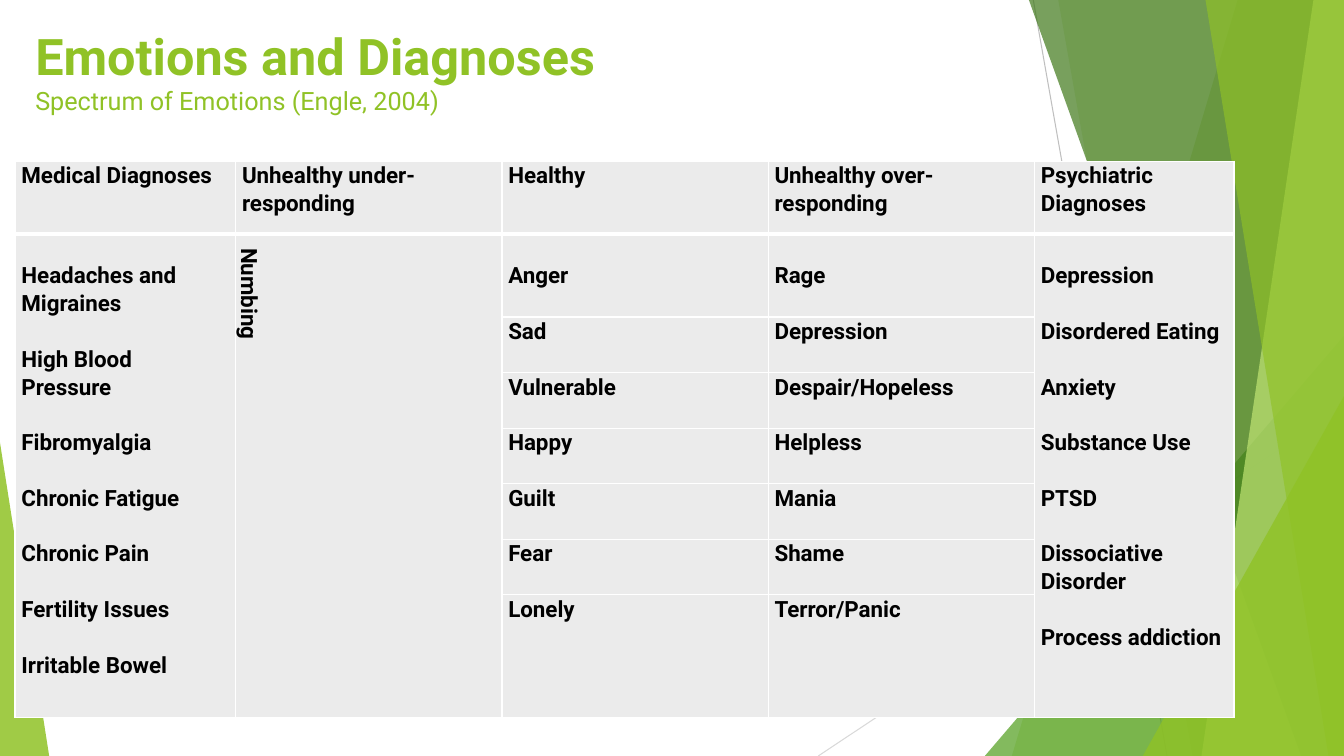
from dataclasses import dataclass

from lxml.etree import SubElement
from pptx import Presentation
from pptx.dml.color import RGBColor
from pptx.enum.shapes import MSO_CONNECTOR, MSO_SHAPE
from pptx.oxml.ns import qn
from pptx.util import Cm, Pt

PAGE_WIDTH, PAGE_HEIGHT = 33.87, 19.05
FONT = "Roboto"
GREEN, CELL_FILL, BLACK, WHITE = "90C226", "EBEBEB", "000000", "FFFFFF"


@dataclass
class Ray:
    start: tuple
    end: tuple
    color: str


@dataclass
class Band:
    top_left: float
    bottom_left: float
    color: str
    opacity: int


@dataclass
class Wedge:
    left: float
    top: float
    width: float
    height: float
    apex: float
    color: str
    opacity: int


RAYS = [
    Ray((26.04, 0), (29.41, PAGE_HEIGHT), "BFBFBF"),
    Ray((PAGE_WIDTH, 10.24), (20.62, PAGE_HEIGHT), "D9D9D9"),
]
FACETS = [
    Band(31.19, 25.5, GREEN, 30),
    Band(26.67, 30.05, GREEN, 20),
    Wedge(24.82, 8.46, 9.05, 10.59, 1, "54A021", 72),
    Band(25.93, 32.79, "3F7819", 70),
    Band(33.1, 30.28, "C0E474", 70),
    Band(30.38, 33.48, GREEN, 65),
    Wedge(28.8, 9.98, 5.07, 9.07, 1, GREEN, 80),
    Wedge(0, 11.15, 1.24, 7.9, 0, GREEN, 85),
]

COLUMN_WIDTHS = [5.56, 6.71, 6.71, 6.71, 5.03]
ROW_HEIGHTS = [1.83, 2.1] + [1.4] * 5 + [3.1]
HEADINGS = ["Medical Diagnoses", "Unhealthy under-responding", "Healthy",
            "Unhealthy over-responding", "Psychiatric Diagnoses"]
MEDICAL = ["Headaches and Migraines", "High Blood\nPressure", "Fibromyalgia",
           "Chronic Fatigue", "Chronic Pain", "Fertility Issues", "Irritable Bowel"]
EMOTIONS = [("Anger", "Rage"), ("Sad", "Depression"), ("Vulnerable", "Despair/Hopeless"),
            ("Happy", "Helpless"), ("Guilt", "Mania"), ("Fear", "Shame"),
            ("Lonely", "Terror/Panic")]
PSYCHIATRIC = ["Depression", "Disordered Eating", "Anxiety", "Substance Use", "PTSD",
               "Dissociative Disorder", "Process addiction"]
BLANK_LINE = 0.7


def rgb(color: str) -> RGBColor:
    return RGBColor.from_string(color)


def write(para, text: str, size: float = 16, color: str = BLACK, bold: bool = True) -> None:
    for index, line in enumerate(text.split("\n")):
        if index:
            para.add_line_break()
        if line:
            span = para.add_run()
            span.text = line
            span.font.name = FONT
            span.font.size = Pt(size)
            span.font.bold = bold
            span.font.color.rgb = rgb(color)


def draw_ray(page, ray: Ray) -> None:
    line = page.shapes.add_connector(
        MSO_CONNECTOR.STRAIGHT, *(Cm(value) for value in ray.start + ray.end))
    line.line.color.rgb = rgb(ray.color)
    line.line.width = Pt(0.75)
    SubElement(line._element.spPr, qn("a:effectLst"))


def draw_facet(page, facet: Band | Wedge) -> None:
    if isinstance(facet, Band):
        builder = page.shapes.build_freeform(Cm(facet.top_left), 0)
        builder.add_line_segments([
            (Cm(PAGE_WIDTH), 0),
            (Cm(PAGE_WIDTH), Cm(PAGE_HEIGHT)),
            (Cm(facet.bottom_left), Cm(PAGE_HEIGHT)),
        ])
        shape = builder.convert_to_shape()
    else:
        shape = page.shapes.add_shape(
            MSO_SHAPE.ISOSCELES_TRIANGLE, Cm(facet.left), Cm(facet.top),
            Cm(facet.width), Cm(facet.height))
        shape.adjustments[0] = facet.apex
    shape.shadow.inherit = False
    shape.line.fill.background()
    shape.fill.solid()
    shape.fill.fore_color.rgb = rgb(facet.color)
    color = shape._element.spPr.find(qn("a:solidFill"))[0]
    SubElement(color, qn("a:alpha"), val=str(facet.opacity * 1000))


def draw_title(page) -> None:
    box = page.shapes.add_textbox(Cm(0.64), Cm(0.51), Cm(32.69), Cm(2.97))
    box.text_frame.word_wrap = True
    para = box.text_frame.paragraphs[0]
    write(para, "Emotions and Diagnoses\n", size=36, color=GREEN)
    write(para, "Spectrum of Emotions (Engle, 2004)", size=18, color=GREEN, bold=False)


def style_cell(cell, row: int) -> None:
    properties = cell._tc.get_or_add_tcPr()
    widths = {"L": 1, "R": 1, "T": 3 if row == 1 else 1, "B": 3 if row == 0 else 1}
    for side, width in widths.items():
        border = SubElement(properties, qn(f"a:ln{side}"), w=str(Pt(width)))
        SubElement(SubElement(border, qn("a:solidFill")), qn("a:srgbClr"), val=WHITE)
    cell.fill.solid()
    cell.fill.fore_color.rgb = rgb(CELL_FILL)
    cell.margin_left = cell.margin_right = Cm(0.16)
    cell.margin_top = cell.margin_bottom = 0


def fill_cell(cell, items: list[str], top: float = 0) -> None:
    cell.margin_top = Cm(top)
    for index, item in enumerate(items):
        frame = cell.text_frame
        para = frame.add_paragraph() if index else frame.paragraphs[0]
        para.line_spacing = 1.07
        if index:
            para.space_before = Cm(BLANK_LINE)
        write(para, item)


def draw_table(page) -> None:
    table = page.shapes.add_table(
        len(ROW_HEIGHTS), len(COLUMN_WIDTHS), Cm(0.38), Cm(4.06),
        Cm(sum(COLUMN_WIDTHS)), Cm(sum(ROW_HEIGHTS))).table
    table.first_row = table.horz_banding = False
    for column, width in zip(table.columns, COLUMN_WIDTHS):
        column.width = Cm(width)
    for index, height in enumerate(ROW_HEIGHTS):
        table.rows[index].height = Cm(height)
        for cell in table.rows[index].cells:
            style_cell(cell, index)
    for column, heading in enumerate(HEADINGS):
        fill_cell(table.cell(0, column), [heading])
    for row, pair in enumerate(EMOTIONS, start=1):
        for column, emotion in enumerate(pair, start=2):
            fill_cell(table.cell(row, column), [emotion], top=BLANK_LINE if row == 1 else 0)
    for column, items in ((0, MEDICAL), (1, ["Numbing"]), (4, PSYCHIATRIC)):
        cell = table.cell(1, column)
        cell.merge(table.cell(len(ROW_HEIGHTS) - 1, column))
        fill_cell(cell, items, top=0 if column == 1 else BLANK_LINE)
    numbing = table.cell(1, 1)
    numbing._tc.get_or_add_tcPr().set("vert", "vert")
    indent = numbing.text_frame.paragraphs[0]._p.get_or_add_pPr()
    indent.set("marL", str(Cm(0.2)))
    indent.set("indent", "0")


def main() -> None:
    deck = Presentation()
    deck.slide_width, deck.slide_height = Cm(PAGE_WIDTH), Cm(PAGE_HEIGHT)
    page = deck.slides.add_slide(deck.slide_layouts[6])
    for ray in RAYS:
        draw_ray(page, ray)
    for facet in FACETS:
        draw_facet(page, facet)
    draw_title(page)
    draw_table(page)
    deck.save("out.pptx")


if __name__ == "__main__":
    main()
